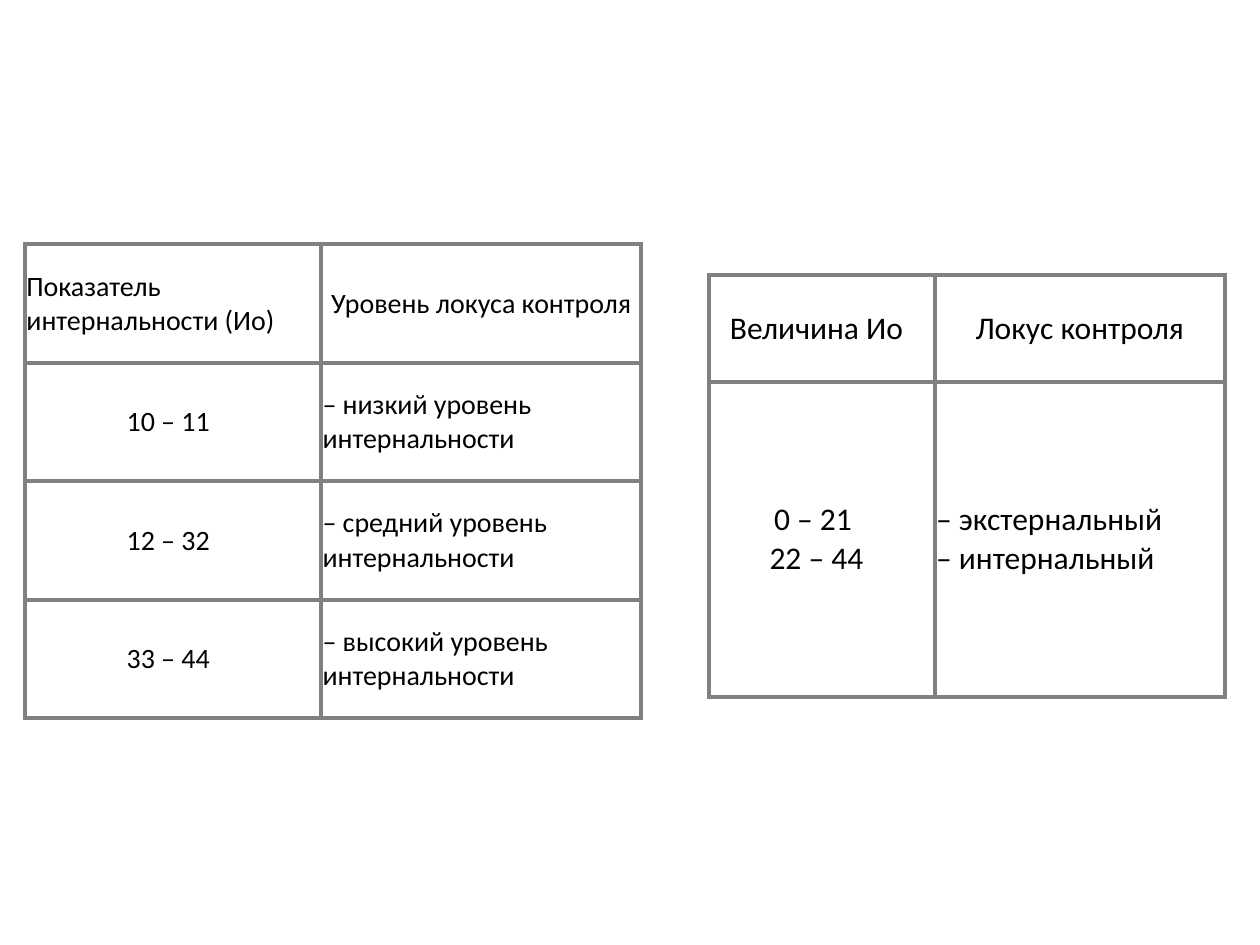
from dataclasses import dataclass
from typing import Optional

from lxml.etree import SubElement
from pptx import Presentation
from pptx.dml.color import RGBColor
from pptx.enum.text import MSO_ANCHOR, PP_ALIGN
from pptx.oxml.ns import qn
from pptx.slide import Slide
from pptx.table import _Cell
from pptx.util import Inches, Pt


@dataclass(frozen=True)
class Theme:
    font: str = "Calibri"
    ink: RGBColor = RGBColor(0, 0, 0)
    paper: RGBColor = RGBColor(255, 255, 255)
    rule: RGBColor = RGBColor(128, 128, 128)
    rule_width: float = 2.6
    level_size: int = 16
    locus_size: int = 18


@dataclass(frozen=True)
class Entry:
    text: str
    align: PP_ALIGN = PP_ALIGN.CENTER


@dataclass(frozen=True)
class Scale:
    left: float
    top: float
    columns: tuple[float, ...]
    rows: tuple[float, ...]
    size: int
    score_inset: float
    entries: tuple[tuple[Entry, ...], ...]
    fill: Optional[RGBColor] = None


THEME = Theme()
LEFT = PP_ALIGN.LEFT
LEVELS = (("10 – 11", "низкий"), ("12 – 32", "средний"), ("33 – 44", "высокий"))

LEVEL_SCALE = Scale(
    0.2, 1.94, (2.35, 2.54), (0.94,) * 4, THEME.level_size, 0.09,
    (
        (Entry("Показатель интернальности (Ио)", LEFT), Entry("Уровень локуса контроля")),
        *((Entry(score), Entry(f"– {level} уровень интернальности", LEFT))
          for score, level in LEVELS),
    ),
)
LOCUS_SCALE = Scale(
    5.63, 2.18, (1.79, 2.3), (0.85, 2.5), THEME.locus_size, 0.1,
    (
        (Entry("Величина Ио"), Entry("Локус контроля")),
        (Entry("0 – 21 \n22 – 44"), Entry("– экстернальный \n– интернальный", LEFT)),
    ),
    THEME.paper,
)


def draw_borders(cell: _Cell) -> None:
    properties = cell._tc.get_or_add_tcPr()
    for position, side in enumerate(("a:lnL", "a:lnR", "a:lnT", "a:lnB")):
        border = SubElement(properties, qn(side), w=str(Pt(THEME.rule_width)))
        solid = SubElement(border, qn("a:solidFill"))
        SubElement(solid, qn("a:srgbClr"), val=str(THEME.rule))
        properties.insert(position, border)


def fill_cell(cell: _Cell, entry: Entry, scale: Scale, right_inset: float) -> None:
    cell.vertical_anchor = MSO_ANCHOR.MIDDLE
    cell.margin_left = cell.margin_top = cell.margin_bottom = Inches(0.01)
    cell.margin_right = Inches(right_inset)
    if scale.fill is None:
        cell.fill.background()
    else:
        cell.fill.solid()
        cell.fill.fore_color.rgb = scale.fill
    paragraph = cell.text_frame.paragraphs[0]
    paragraph.text = entry.text
    paragraph.alignment = entry.align
    paragraph.font.name = THEME.font
    paragraph.font.size = Pt(scale.size)
    paragraph.font.color.rgb = THEME.ink
    draw_borders(cell)


def draw_scale(slide: Slide, scale: Scale) -> None:
    table = slide.shapes.add_table(
        len(scale.rows), len(scale.columns), Inches(scale.left), Inches(scale.top),
        Inches(sum(scale.columns)), Inches(sum(scale.rows)),
    ).table
    table.first_row = table.horz_banding = False
    for column, width in zip(table.columns, scale.columns):
        column.width = Inches(width)
    for row, height, entries in zip(table.rows, scale.rows, scale.entries):
        row.height = Inches(height)
        for cell, entry, inset in zip(row.cells, entries, (scale.score_inset, 0.01)):
            fill_cell(cell, entry, scale, inset)


def main() -> None:
    presentation = Presentation()
    presentation.slide_width = Inches(10)
    presentation.slide_height = Inches(7.5)
    slide = presentation.slides.add_slide(presentation.slide_layouts[6])
    for scale in (LEVEL_SCALE, LOCUS_SCALE):
        draw_scale(slide, scale)
    presentation.save("out.pptx")


if __name__ == "__main__":
    main()
